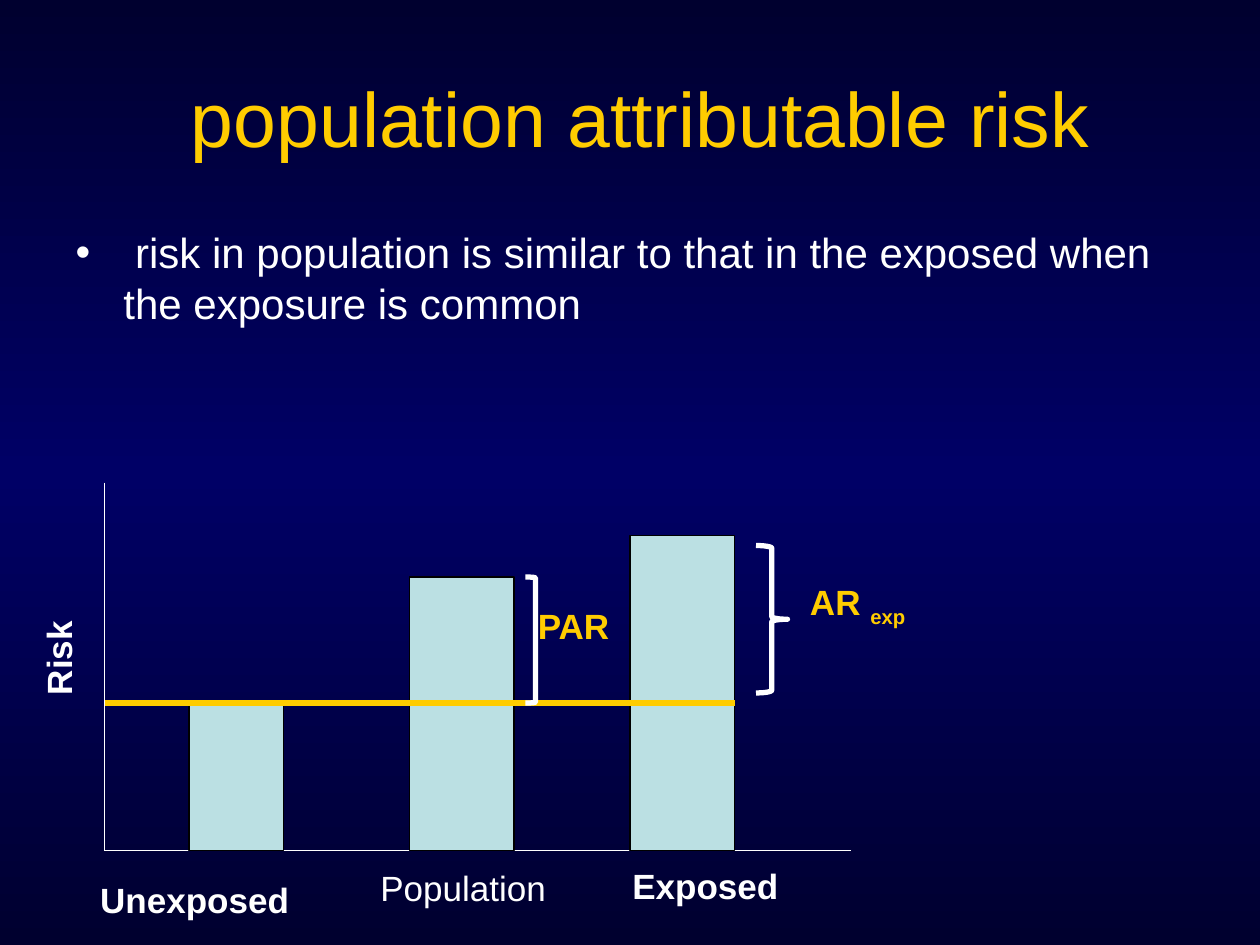
"""Build a slide on population attributable risk with a bar sketch."""
from copy import deepcopy

from lxml import etree
from pptx import Presentation
from pptx.dml.color import RGBColor
from pptx.enum.shapes import MSO_CONNECTOR, MSO_SHAPE
from pptx.enum.text import MSO_ANCHOR, MSO_AUTO_SIZE, PP_ALIGN
from pptx.oxml.ns import qn
from pptx.util import Inches, Pt

LEFT, CENTER = PP_ALIGN.LEFT, PP_ALIGN.CENTER
MIDDLE, TOP = MSO_ANCHOR.MIDDLE, MSO_ANCHOR.TOP
STRAIGHT = MSO_CONNECTOR.STRAIGHT
RECTANGLE, BRACE, BRACKET = MSO_SHAPE.RECTANGLE, MSO_SHAPE.RIGHT_BRACE, MSO_SHAPE.RIGHT_BRACKET
WHITE, GOLD, PALE, BLACK = "FFFFFF", "FFCC00", "BBE0E3", "000000"
NAVY, BLUE = "00002F", "000066"
AXIS_LEFT, AXIS_TOP, AXIS_RIGHT = 0.83, 3.83, 6.75
BASE, BASELINE_RISK, BAR_END = 6.75, 5.58, 5.83


def color(value):
    """Turn a hex string into a color."""
    return RGBColor.from_string(value)


def write(box, spans, size, tint, align=LEFT, bold=False):
    """Fill the first paragraph of a box and return it."""
    para = box.text_frame.paragraphs[0]
    para.alignment = align
    para.space_before = Pt(0)
    for text in spans:
        span = para.add_run()
        span.text = text
        span.font.name = "Arial"
        span.font.size = Pt(size)
        span.font.bold = bold
        span.font.color.rgb = color(tint)
    return para


deck = Presentation()
deck.slide_width, deck.slide_height = Inches(10), Inches(7.5)
page = deck.slides.add_slide(deck.slide_layouts[1])

backdrop = page.background.fill
backdrop.gradient()
backdrop.gradient_angle = 270
stop_list = page.element.find(".//" + qn("a:gsLst"))
stop_list.insert(1, deepcopy(stop_list[0]))
for stop, position, tint in zip(backdrop.gradient_stops, (0, 0.5, 1), (NAVY, BLUE, NAVY)):
    stop.position = position
    stop.color.rgb = color(tint)

title, body = page.placeholders
for holder, top, height, anchor in ((title, 0.3, 1.25, MIDDLE), (body, 1.75, 1, TOP)):
    holder.left, holder.top = Inches(0.5), Inches(top)
    holder.width, holder.height = Inches(9), Inches(height)
    holder.text_frame.word_wrap = True
    holder.text_frame.auto_size = MSO_AUTO_SIZE.NONE
    holder.text_frame.vertical_anchor = anchor
write(title, [" population attributable risk"], 44, GOLD, CENTER)
bullet_para = write(
    body, [" risk in population is similar to that in the exposed when the exposure is common"], 24, WHITE)
properties = bullet_para._p.get_or_add_pPr()
properties.set("marL", str(Inches(0.38)))
properties.set("indent", str(Inches(-0.38)))
bullet_color = etree.SubElement(properties, qn("a:buClr"))
etree.SubElement(bullet_color, qn("a:srgbClr"), val=WHITE)
etree.SubElement(properties, qn("a:buFont"), typeface="Arial")
etree.SubElement(properties, qn("a:buChar"), char="•")

bars = [(RECTANGLE, left, top, width, BASE - top, PALE, BLACK, 0.75)
        for left, top, width in ((1.5, BASELINE_RISK, 0.75), (3.25, 4.58, 0.83), (5, 4.25, 0.83))]
braces = [(BRACE, 6, 4.33, 0.25, 1.17, None, WHITE, 3),
          (BRACKET, 4.17, 4.58, 0.08, 1, None, WHITE, 3)]
lines = [(AXIS_LEFT, AXIS_TOP, AXIS_LEFT, BASE, WHITE, 0.75),
         (AXIS_LEFT, BASE, AXIS_RIGHT, BASE, WHITE, 0.75),
         (AXIS_LEFT, BASELINE_RISK, BAR_END, BASELINE_RISK, GOLD, 3)]

for item in lines[:2] + bars + lines[2:] + braces:
    *geometry, tint, weight = item
    if item in lines:
        drawn = page.shapes.add_connector(STRAIGHT, *map(Inches, geometry))
        etree.SubElement(drawn._element.spPr, qn("a:effectLst"))
    else:
        kind, *frame, fill = geometry
        drawn = page.shapes.add_shape(kind, *map(Inches, frame))
        drawn.shadow.inherit = False
        if fill:
            drawn.fill.solid()
            drawn.fill.fore_color.rgb = color(fill)
        else:
            drawn.fill.background()
            drawn.adjustments[0] = 0.083
    drawn.line.color.rgb = color(tint)
    drawn.line.width = Pt(weight)

labels = [(["Unexposed"], 0.67, 6.92, 1.75, WHITE, CENTER, True, 0),
          (["Population"], 2.92, 6.83, 1.59, WHITE, LEFT, False, 0),
          (["Exposed"], 4.92, 6.81, 1.36, WHITE, LEFT, True, 0),
          (["AR ", "exp"], 6.33, 4.56, 0.99, GOLD, LEFT, True, 0),
          (["PAR"], 4.17, 4.75, 0.83, GOLD, LEFT, True, 0),
          (["Risk"], 0.03, 4.97, 0.86, WHITE, LEFT, True, 270)]
for spans, left, top, width, tint, align, bold, turn in labels:
    box = page.shapes.add_textbox(*map(Inches, (left, top, width, 0.43)))
    box.rotation = turn
    box.text_frame.word_wrap = True
    box.text_frame.auto_size = MSO_AUTO_SIZE.SHAPE_TO_FIT_TEXT
    para = write(box, spans, 20, tint, align, bold)
    for subscript in para.runs[1:]:
        subscript.font._element.set("baseline", "-25000")

deck.save("out.pptx")
